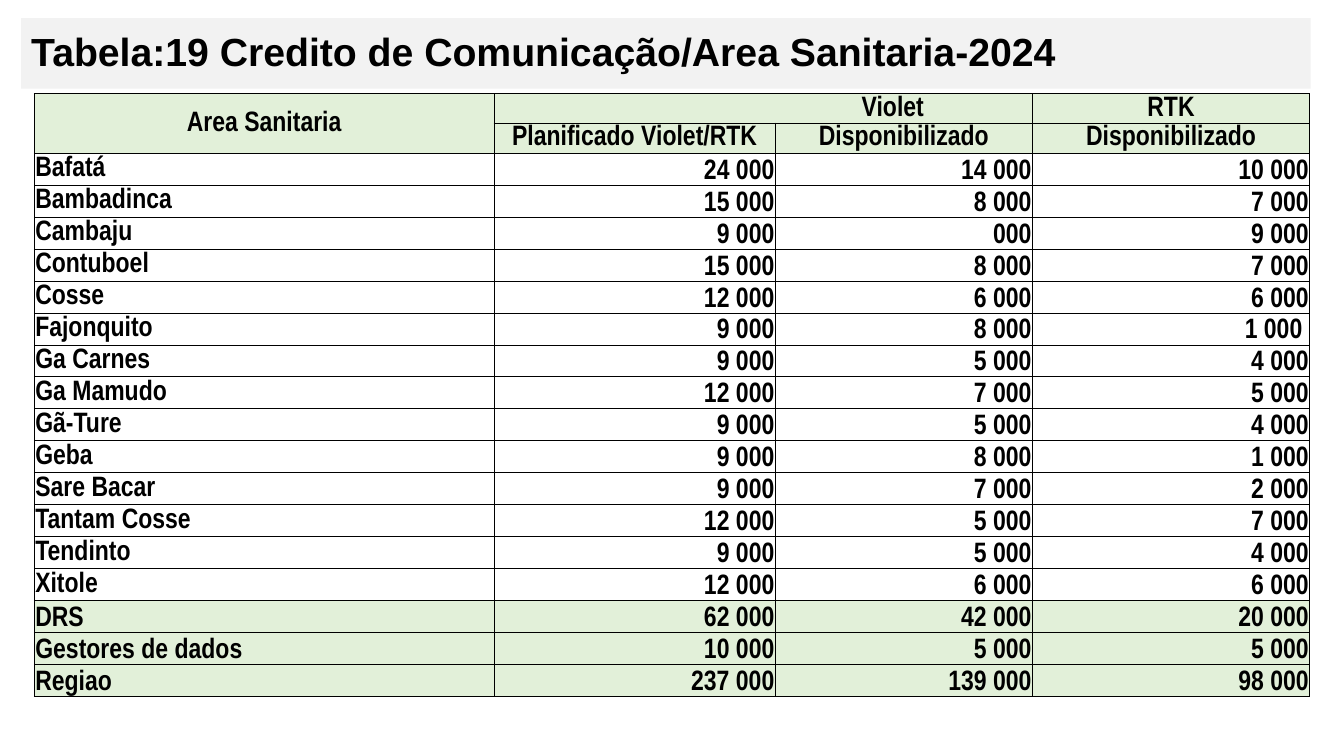
"""Builds the slide with the 2024 communication credit table by health area."""
from lxml import etree
from pptx import Presentation
from pptx.dml.color import RGBColor
from pptx.enum.text import MSO_ANCHOR, MSO_AUTO_SIZE, PP_ALIGN
from pptx.oxml.ns import qn
from pptx.util import Inches, Pt

LEFT, CENTER, RIGHT = PP_ALIGN.LEFT, PP_ALIGN.CENTER, PP_ALIGN.RIGHT
MIDDLE, BOTTOM = MSO_ANCHOR.MIDDLE, MSO_ANCHOR.BOTTOM
NO_AUTOFIT = MSO_AUTO_SIZE.NONE
BLACK = RGBColor(0x00, 0x00, 0x00)
GREY = RGBColor(0xF2, 0xF2, 0xF2)
GREEN = RGBColor(0xE2, 0xF0, 0xD9)

COLUMN_WIDTHS = [4.56, 2.79, 2.55, 2.75]
HEADER_HEIGHTS = [0.29, 0.3]
BODY_HEIGHT = 5.39
HEADERS = [
    (0, 0, "Area Sanitaria"),
    (0, 1, "Violet"),
    (0, 3, "RTK"),
    (1, 1, "Planificado Violet/RTK"),
    (1, 2, "Disponibilizado"),
    (1, 3, "Disponibilizado"),
]
AREAS = [
    ("Bafatá", "24 000", "14 000", "10 000"),
    ("Bambadinca", "15 000", "8 000", "7 000"),
    ("Cambaju", "9 000", "000", "9 000"),
    ("Contuboel", "15 000", "8 000", "7 000"),
    ("Cosse", "12 000", "6 000", "6 000"),
    ("Fajonquito", "9 000", "8 000", "1 000 "),
    ("Ga Carnes", "9 000", "5 000", "4 000"),
    ("Ga Mamudo", "12 000", "7 000", "5 000"),
    ("Gã-Ture", "9 000", "5 000", "4 000"),
    ("Geba", "9 000", "8 000", "1 000"),
    ("Sare Bacar", "9 000", "7 000", "2 000"),
    ("Tantam Cosse", "12 000", "5 000", "7 000"),
    ("Tendinto", "9 000", "5 000", "4 000"),
    ("Xitole", "12 000", "6 000", "6 000"),
]
TOTALS = [
    ("DRS", "62 000", "42 000", "20 000"),
    ("Gestores de dados", "10 000", "5 000", "5 000"),
    ("Regiao", "237 000", "139 000", "98 000"),
]


class CreditSlide:
    """Holds the text style and the slide being filled."""

    def __init__(self, slide):
        self.slide = slide
        self.title_font, self.title_size = "Arial", Pt(28)
        self.table_font, self.table_size = "Arial Narrow", Pt(20)

    def style(self, paragraph, font, size, alignment):
        """Sets the alignment and bold black font of a paragraph."""
        paragraph.alignment = alignment
        paragraph.font.name = font
        paragraph.font.size = size
        paragraph.font.bold = True
        paragraph.font.color.rgb = BLACK

    def title(self, text, left, top, width, height):
        """Fills the title placeholder as a grey band."""
        band = self.slide.shapes.title
        band.left, band.top = Inches(left), Inches(top)
        band.width, band.height = Inches(width), Inches(height)
        band.fill.solid()
        band.fill.fore_color.rgb = GREY
        frame = band.text_frame
        frame.text = text
        frame.auto_size = NO_AUTOFIT
        frame.vertical_anchor = MIDDLE
        heading = frame.paragraphs[0]
        heading.line_spacing = 0.9
        self.style(heading, self.title_font, self.title_size, LEFT)

    def table(self, left, top, widths, heights):
        """Adds an empty bordered table."""
        grid = self.slide.shapes.add_table(
            len(heights), len(widths), Inches(left), Inches(top),
            Inches(sum(widths)), Inches(sum(heights))).table
        grid.first_row = grid.horz_banding = False
        for column, width in zip(grid.columns, widths):
            column.width = Inches(width)
        for row, height in zip(grid.rows, heights):
            row.height = Inches(height)
        for cell in grid.iter_cells():
            self.border(cell)
            self.cell(cell, "", LEFT, MIDDLE)
        return grid

    def border(self, cell):
        """Draws a thin black line on each side of a cell."""
        properties = cell._tc.get_or_add_tcPr()
        for side in ("a:lnL", "a:lnR", "a:lnT", "a:lnB"):
            line = etree.SubElement(properties, qn(side), w=str(Pt(0.5)))
            fill = etree.SubElement(line, qn("a:solidFill"))
            etree.SubElement(fill, qn("a:srgbClr"), val=str(BLACK))

    def cell(self, cell, text, alignment, anchor, fill=None):
        """Writes and formats one table cell."""
        cell.text = text
        cell.vertical_anchor = anchor
        cell.margin_left = cell.margin_right = cell.margin_top = Inches(0.01)
        cell.margin_bottom = 0
        if fill is None:
            cell.fill.background()
        else:
            cell.fill.solid()
            cell.fill.fore_color.rgb = fill
        self.style(cell.text_frame.paragraphs[0], self.table_font,
                   self.table_size, alignment)


def main():
    """Creates and saves the presentation."""
    deck = Presentation()
    deck.slide_width, deck.slide_height = Inches(13.33), Inches(7.5)
    page = CreditSlide(deck.slides.add_slide(deck.slide_layouts[5]))
    page.title("Tabela:19 Credito de Comunicação/Area Sanitaria-2024",
               0.21, 0.18, 12.79, 0.7)

    body = AREAS + TOTALS
    heights = HEADER_HEIGHTS + [BODY_HEIGHT / len(body)] * len(body)
    credits = page.table(0.34, 0.93, COLUMN_WIDTHS, heights)
    credits.cell(0, 0).merge(credits.cell(1, 0))
    credits.cell(0, 1).merge(credits.cell(0, 2))
    for row, column, label in HEADERS:
        page.cell(credits.cell(row, column), label, CENTER, MIDDLE, GREEN)
    credits.cell(0, 1).margin_left = Inches(2.58)

    for row, values in enumerate(body, len(HEADER_HEIGHTS)):
        is_total = values in TOTALS
        for column, value in enumerate(values):
            is_area = column == 0 and not is_total
            page.cell(credits.cell(row, column), value,
                      RIGHT if column else LEFT,
                      MIDDLE if is_area else BOTTOM,
                      GREEN if is_total else None)
    deck.save("out.pptx")


if __name__ == "__main__":
    main()
